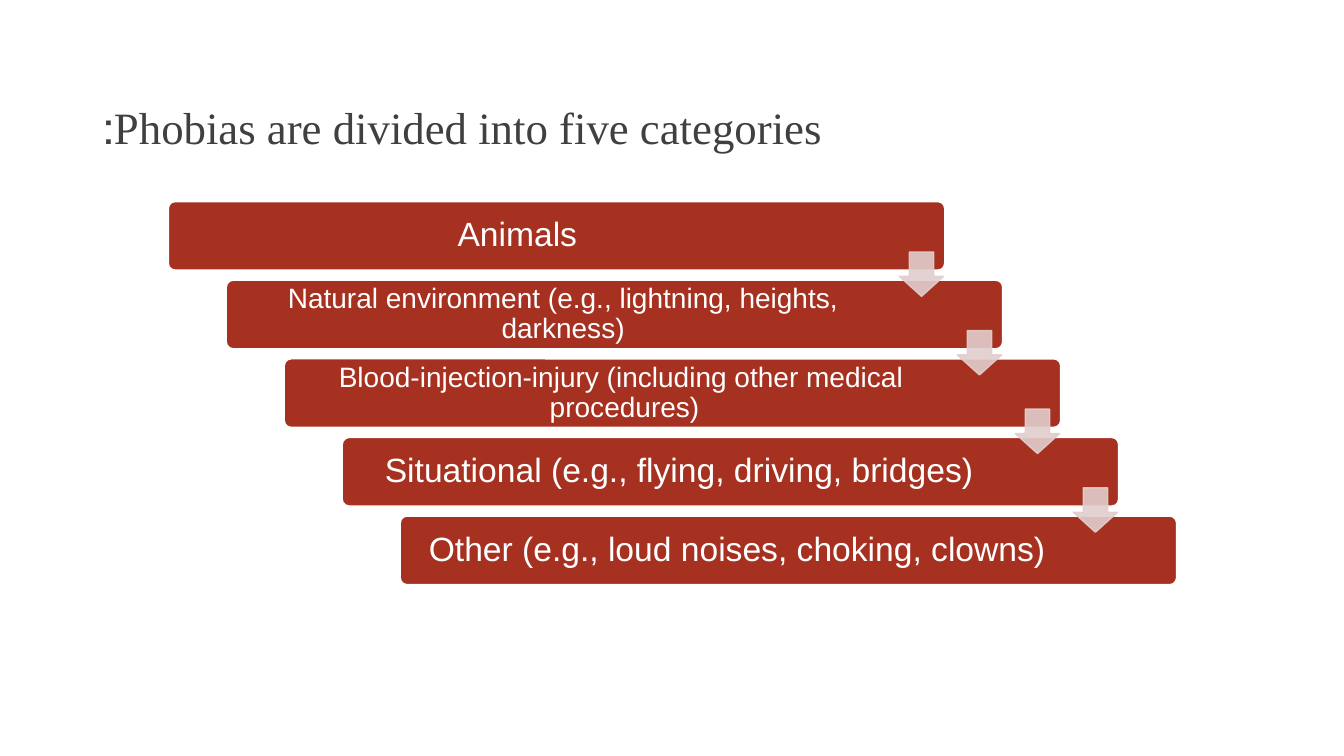
from pptx import Presentation
from pptx.dml.color import RGBColor
from pptx.enum.shapes import MSO_SHAPE
from pptx.enum.text import MSO_ANCHOR, PP_ALIGN
from pptx.oxml.ns import qn
from pptx.util import Inches, Pt
from lxml import etree

BAR, ARROW = MSO_SHAPE.ROUNDED_RECTANGLE, MSO_SHAPE.DOWN_ARROW
LEFT, CENTER = PP_ALIGN.LEFT, PP_ALIGN.CENTER
BOTTOM, MIDDLE = MSO_ANCHOR.BOTTOM, MSO_ANCHOR.MIDDLE

TITLE = "Phobias are divided into five categories:"
CATEGORIES = [
    ("Animals", "large"),
    ("Natural environment (e.g., lightning, heights, darkness)", "small"),
    ("Blood-injection-injury (including other medical procedures) ", "small"),
    ("Situational (e.g., flying, driving, bridges)", "large"),
    ("Other (e.g., loud noises, choking, clowns)", "large"),
]
THEME = {
    "bar": "A63121", "edge": "FFFFFF", "arrow": "E1CECD", "title": "404040",
    "label": "FFFFFF", "heading_font": "Times New Roman", "body_font": "Arial",
    "heading_size": 32, "large": (24, 0.1), "small": (20, 0.08),
}

SLIDE_W, SLIDE_H = 13.33, 7.5
STAIR_X, STAIR_Y = 1.67, 2
STEP_X, STEP_Y = 0.575, 0.78
BAR_W, BAR_H = 7.7, 0.68
PAD = 0.02
FIRST_LABEL_W, LABEL_W = 6.88, 6.64
ARROW_SIZE = 0.44
ARROW_DX, ARROW_DY = 7.25, 0.5


def add_text(s, box, text, font, size, color, align, anchor, inset=None):
    tf = s.shapes.add_textbox(*map(Inches, box)).text_frame
    tf.word_wrap = True
    tf.vertical_anchor = anchor
    if inset is not None:
        tf.margin_left = tf.margin_right = Inches(inset)
        tf.margin_top = tf.margin_bottom = Inches(inset)
    p = tf.paragraphs[0]
    p.alignment = align
    p.line_spacing = 0.9
    p._p.get_or_add_pPr().set("rtl", "1")
    r = p.add_run()
    r.text = text
    r.font.name = font
    r.font.size = Pt(size)
    r.font.color.rgb = RGBColor.from_string(color)


def add_block(s, kind, box, adjustments, fill, line, alpha=None):
    sp = s.shapes.add_shape(kind, *map(Inches, box))
    sp.shadow.inherit = False
    for i, value in enumerate(adjustments):
        sp.adjustments[i] = value
    sp.fill.solid()
    sp.fill.fore_color.rgb = RGBColor.from_string(fill)
    sp.line.color.rgb = RGBColor.from_string(line)
    sp.line.width = Pt(1)
    if alpha is not None:
        for color in sp._element.spPr.iter(qn("a:srgbClr")):
            etree.SubElement(color, qn("a:alpha")).set("val", str(alpha * 1000))


def main():
    prs = Presentation()
    prs.slide_width, prs.slide_height = Inches(SLIDE_W), Inches(SLIDE_H)
    s = prs.slides.add_slide(prs.slide_layouts[6])

    add_text(s, (0.92, 0.4, 10.75, 1.18), TITLE, THEME["heading_font"],
             THEME["heading_size"], THEME["title"], LEFT, BOTTOM)

    for i, (label, scale) in enumerate(CATEGORIES):
        x, y = STAIR_X + i * STEP_X, STAIR_Y + i * STEP_Y
        add_block(s, BAR, (x, y, BAR_W, BAR_H), [0.1], THEME["bar"], THEME["edge"])
        size, inset = THEME[scale]
        width = LABEL_W if i else FIRST_LABEL_W
        add_text(s, (x + PAD, y + PAD, width, BAR_H - 2 * PAD), label,
                 THEME["body_font"], size, THEME["label"], CENTER, MIDDLE, inset)

    for i in range(len(CATEGORIES) - 1):
        x = STAIR_X + i * STEP_X + ARROW_DX
        y = STAIR_Y + i * STEP_Y + ARROW_DY
        add_block(s, ARROW, (x, y, ARROW_SIZE, ARROW_SIZE), [0.55, 0.45],
                  THEME["arrow"], THEME["arrow"], alpha=90)

    prs.save("out.pptx")


if __name__ == "__main__":
    main()
